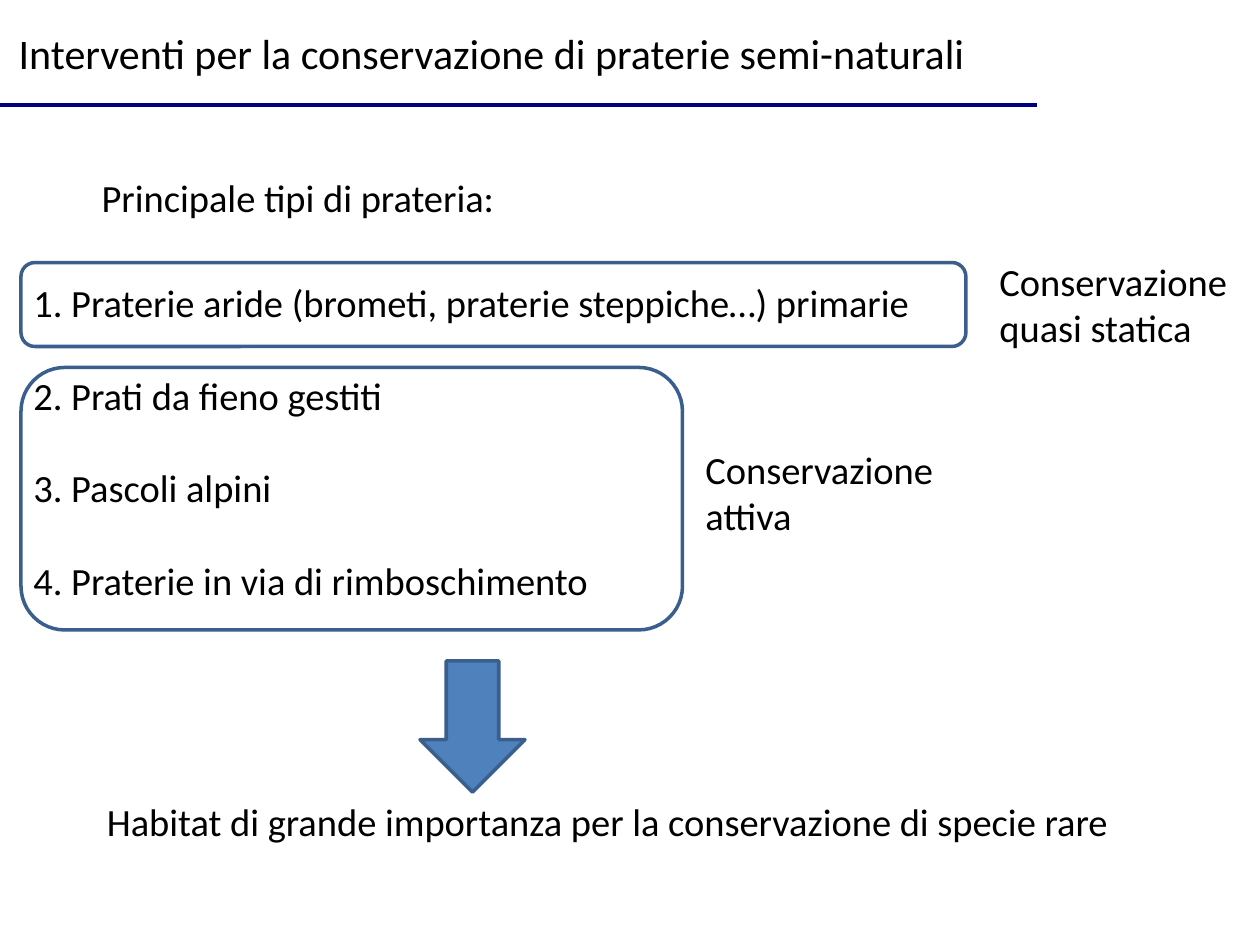
import pptx
import pptx.dml.color
import pptx.enum.shapes
import pptx.enum.text
import pptx.oxml
import pptx.oxml.ns
import pptx.util

COLS, ROWS = 120, 90
SHAPE = pptx.enum.shapes.MSO_SHAPE


def color(value):
    return pptx.dml.color.RGBColor.from_string(value)


class Page:
    font, size, ink = "Calibri", 22, "000000"
    outline, accent, rule_color, stroke = "3A5F8C", "4F81BD", "000080", 2

    def __init__(self, prs):
        self.s = prs.slides.add_slide(prs.slide_layouts[6])
        self.width, self.height = prs.slide_width, prs.slide_height

    def place(self, x, y, w, h):
        return [round(n * total / count) for n, total, count in (
            (x, self.width, COLS), (y, self.height, ROWS),
            (w, self.width, COLS), (h, self.height, ROWS))]

    def rule(self, x1, y1, x2, y2):
        line = self.s.shapes.add_connector(
            pptx.enum.shapes.MSO_CONNECTOR.STRAIGHT, *self.place(x1, y1, x2, y2))
        line.line.color.rgb = color(self.rule_color)
        line.line.width = pptx.util.Pt(self.stroke)
        sp_pr = line._element.spPr
        sp_pr.append(pptx.oxml.parse_xml(
            "<a:effectLst %s/>" % pptx.oxml.ns.nsdecls("a")))

    def text(self, x, y, w, h, *lines, size=None, wrap=True, gap=0):
        tf = self.s.shapes.add_textbox(*self.place(x, y, w, h)).text_frame
        tf.word_wrap = wrap
        tf.auto_size = pptx.enum.text.MSO_AUTO_SIZE.SHAPE_TO_FIT_TEXT
        for i, line in enumerate(lines):
            p = tf.paragraphs[0] if i == 0 else tf.add_paragraph()
            p.text = line
            p.font.name = self.font
            p.font.size = pptx.util.Pt(size or self.size)
            p.font.color.rgb = color(self.ink)
            if i:
                p.space_before = pptx.util.Pt(gap)

    def shape(self, kind, x, y, w, h, fill=None, rotation=0):
        sp = self.s.shapes.add_shape(kind, *self.place(x, y, w, h))
        sp.shadow.inherit = False
        sp.rotation = rotation
        if fill:
            sp.fill.solid()
            sp.fill.fore_color.rgb = color(fill)
        else:
            sp.fill.background()
        sp.line.color.rgb = color(self.outline)
        sp.line.width = pptx.util.Pt(self.stroke)


def main():
    prs = pptx.Presentation()
    prs.slide_width = pptx.util.Inches(10)
    prs.slide_height = pptx.util.Inches(7.5)
    page = Page(prs)

    page.rule(0, 10, 98.75, 10)
    page.text(8.5, 16, 98.5, 5.6, "Principale tipi di prateria:")
    page.text(2, 26, 99, 32.3,
              "1. Praterie aride (brometi, praterie steppiche…) primarie",
              "2. Prati da fieno gestiti",
              "3. Pascoli alpini",
              "4. Praterie in via di rimboschimento", gap=26.5)
    page.text(9, 75.4, 98.5, 5.6,
              "Habitat di grande importanza per la conservazione di specie rare")
    page.shape(SHAPE.RIGHT_ARROW, 38.75, 64.2, 12.5, 10, page.accent, 90)
    page.text(0.6, 2, 93.5, 6,
              "Interventi per la conservazione di praterie semi-naturali",
              size=24, wrap=False)
    page.shape(SHAPE.ROUNDED_RECTANGLE, 2, 25, 90, 8)
    page.shape(SHAPE.ROUNDED_RECTANGLE, 2, 35, 63, 25)
    page.text(94, 24, 28, 10, "Conservazione quasi statica")
    page.text(66, 41.9, 28, 10, "Conservazione attiva")

    prs.save("out.pptx")


if __name__ == "__main__":
    main()
